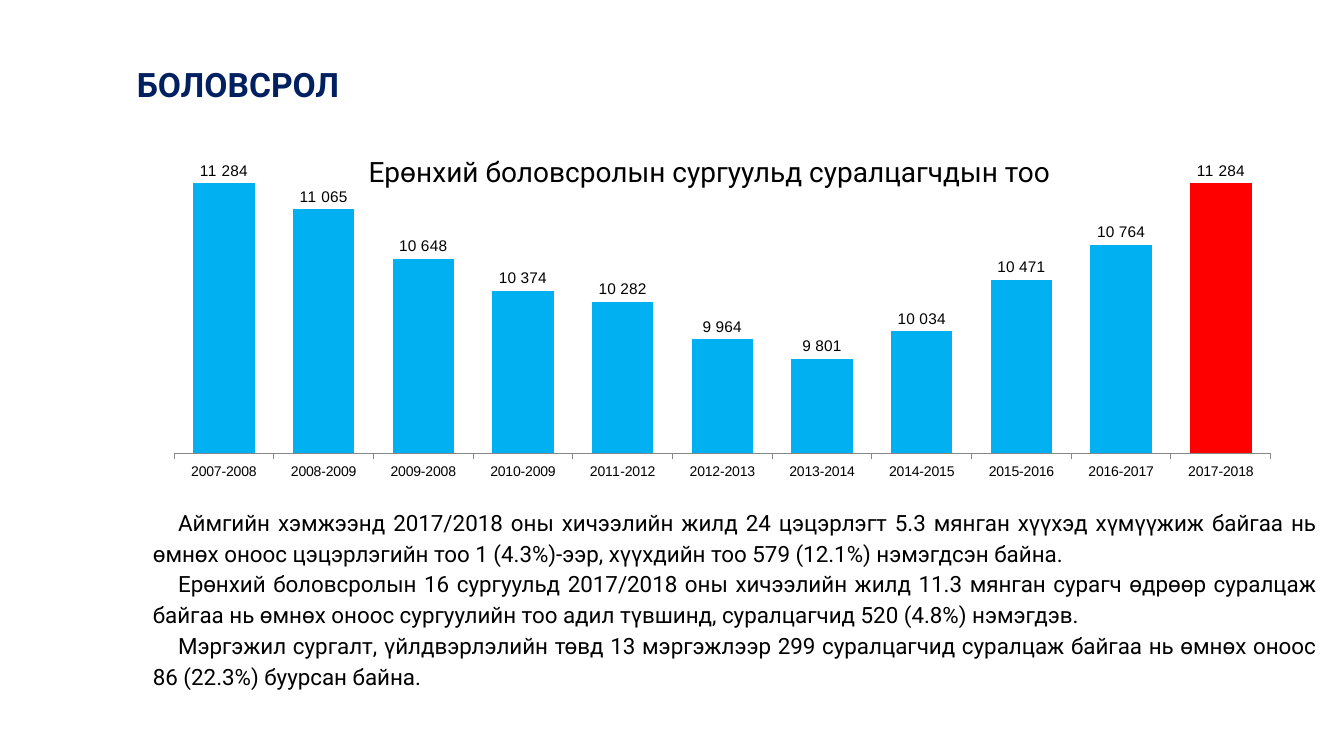
import pptx
import pptx.chart.data
import pptx.dml.color
import pptx.enum.chart
import pptx.enum.text
import pptx.oxml
import pptx.oxml.ns
import pptx.util

RGBColor = pptx.dml.color.RGBColor
NAVY = RGBColor(0x00, 0x20, 0x60)
BLACK = RGBColor(0x00, 0x00, 0x00)
GREY = RGBColor(0x87, 0x87, 0x87)
BLUE = RGBColor(0x00, 0xB0, 0xF0)
RED = RGBColor(0xFF, 0x00, 0x00)

TITLE = "БОЛОВСРОЛ"
CAPTION = "Ерөнхий боловсролын сургуульд суралцагчдын тоо"
PARAGRAPHS = [
    "Аймгийн хэмжээнд 2017/2018 оны хичээлийн жилд 24 цэцэрлэгт 5.3 мянган хүүхэд хүмүүжиж "
    "байгаа нь өмнөх оноос цэцэрлэгийн тоо 1 (4.3%)-ээр, хүүхдийн тоо 579 (12.1%) нэмэгдсэн байна.",
    "Ерөнхий боловсролын 16 сургуульд 2017/2018 оны хичээлийн жилд 11.3 мянган сурагч өдрөөр суралцаж "
    "байгаа нь өмнөх оноос сургуулийн тоо адил түвшинд, суралцагчид 520 (4.8%) нэмэгдэв.",
    "Мэргэжил сургалт, үйлдвэрлэлийн төвд 13 мэргэжлээр 299 суралцагчид суралцаж "
    "байгаа нь өмнөх оноос 86 (22.3%) буурсан байна.",
]
PUPILS = {
    "2007-2008": 11284, "2008-2009": 11065, "2009-2008": 10648, "2010-2009": 10374,
    "2011-2012": 10282, "2012-2013": 9964, "2013-2014": 9801, "2014-2015": 10034,
    "2015-2016": 10471, "2016-2017": 10764, "2017-2018": 11284,
}
NUMBER_FORMAT = "#\\ ##0"


class EducationSlide:
    """Builds one slide on a grid of 160 columns by 90 rows."""

    columns, rows = 160, 90
    text_font, chart_font = "Roboto", "Arial"

    def __init__(self, presentation):
        self.column = presentation.slide_width / self.columns
        self.row = presentation.slide_height / self.rows
        self.slide = presentation.slides.add_slide(presentation.slide_layouts[1])

    def area(self, left, top, width, height):
        return (int(left * self.column), int(top * self.row),
                int(width * self.column), int(height * self.row))

    def place(self, shape, area):
        shape.left, shape.top, shape.width, shape.height = self.area(*area)

    def style(self, paragraph, size, color, bold=False):
        for run in paragraph.runs:
            run.font.name = self.text_font
            run.font.size = pptx.util.Pt(size)
            run.font.color.rgb = color
            run.font.bold = bold

    def title(self, text, area):
        shape = self.slide.shapes.title
        self.place(shape, area)
        frame = shape.text_frame
        frame.text = text
        frame.auto_size = pptx.enum.text.MSO_AUTO_SIZE.NONE
        frame.vertical_anchor = pptx.enum.text.MSO_ANCHOR.MIDDLE
        frame.paragraphs[0].alignment = pptx.enum.text.PP_ALIGN.LEFT
        self.style(frame.paragraphs[0], 24, NAVY, bold=True)

    def body(self, texts, area):
        shape = self.slide.placeholders[1]
        self.place(shape, area)
        frame = shape.text_frame
        frame.text = "\n".join(texts)
        frame.auto_size = pptx.enum.text.MSO_AUTO_SIZE.NONE
        for paragraph in frame.paragraphs:
            properties = paragraph._p.get_or_add_pPr()
            properties.set("marL", "0")
            properties.set("indent", str(pptx.util.Inches(0.25)))
            properties.append(pptx.oxml.parse_xml(
                f"<a:buNone {pptx.oxml.ns.nsdecls('a')}/>"))
            paragraph.alignment = pptx.enum.text.PP_ALIGN.JUSTIFY
            paragraph.line_spacing = 1.15
            paragraph.space_before = pptx.util.Pt(0)
            self.style(paragraph, 16, BLACK)

    def caption(self, text, area):
        frame = self.slide.shapes.add_textbox(*self.area(*area)).text_frame
        frame.word_wrap = True
        frame.text = text
        self.style(frame.paragraphs[0], 20, BLACK)

    def chart(self, values, area):
        data = pptx.chart.data.CategoryChartData(number_format=NUMBER_FORMAT)
        data.categories = list(values)
        data.add_series("Series 1", list(values.values()))
        chart = self.slide.shapes.add_chart(
            pptx.enum.chart.XL_CHART_TYPE.COLUMN_CLUSTERED, *self.area(*area), data).chart
        chart.has_title = chart.has_legend = False
        chart.font.name = self.chart_font
        chart.font.size = pptx.util.Pt(8)
        chart.font.color.rgb = BLACK
        self.axes(chart)
        self.bars(chart.plots[0])
        self.plot_layout(chart, x=0.02, y=0.02, w=0.96, h=0.88)

    def axes(self, chart):
        value_axis, category_axis = chart.value_axis, chart.category_axis
        value_axis.minimum_scale, value_axis.maximum_scale = 9000, 11500
        value_axis.has_major_gridlines = False
        value_axis.visible = False
        category_axis.major_tick_mark = pptx.enum.chart.XL_TICK_MARK.OUTSIDE
        category_axis.tick_labels.font.size = pptx.util.Pt(10)
        category_axis.format.line.color.rgb = GREY
        category_axis.format.line.width = pptx.util.Pt(0.75)

    def bars(self, plot):
        plot.gap_width, plot.overlap = 62, -54
        plot.vary_by_categories = False
        series = plot.series[0]
        last = len(series.values) - 1
        for part, color in ((series, BLUE), (series.points[last], RED)):
            part.format.fill.solid()
            part.format.fill.fore_color.rgb = color
        labels = series.data_labels
        labels.show_value = True
        labels.number_format = NUMBER_FORMAT
        labels.number_format_is_linked = False
        labels.position = pptx.enum.chart.XL_LABEL_POSITION.OUTSIDE_END
        labels.font.size = pptx.util.Pt(11)

    def plot_layout(self, chart, **shares):
        sizes = "".join(f'<c:{key} val="{share}"/>' for key, share in shares.items())
        plot_area = chart._chartSpace.chart.plotArea
        for layout in plot_area.findall(pptx.oxml.ns.qn("c:layout")):
            plot_area.remove(layout)
        plot_area.insert(0, pptx.oxml.parse_xml(
            f"<c:layout {pptx.oxml.ns.nsdecls('c')}><c:manualLayout>"
            '<c:layoutTarget val="inner"/><c:xMode val="edge"/><c:yMode val="edge"/>'
            f"{sizes}</c:manualLayout></c:layout>"))


def main():
    presentation = pptx.Presentation()
    presentation.slide_width = pptx.util.Inches(13.33)
    presentation.slide_height = pptx.util.Inches(7.5)
    education = EducationSlide(presentation)
    education.title(TITLE, (15.1, 7, 134, 6.1))
    education.body(PARAGRAPHS, (17, 59.5, 141, 23.5))
    education.chart(PUPILS, (18, 18, 136, 40))
    education.caption(CAPTION, (42.7, 17.8, 103.3, 5.3))
    presentation.save("out.pptx")


if __name__ == "__main__":
    main()
